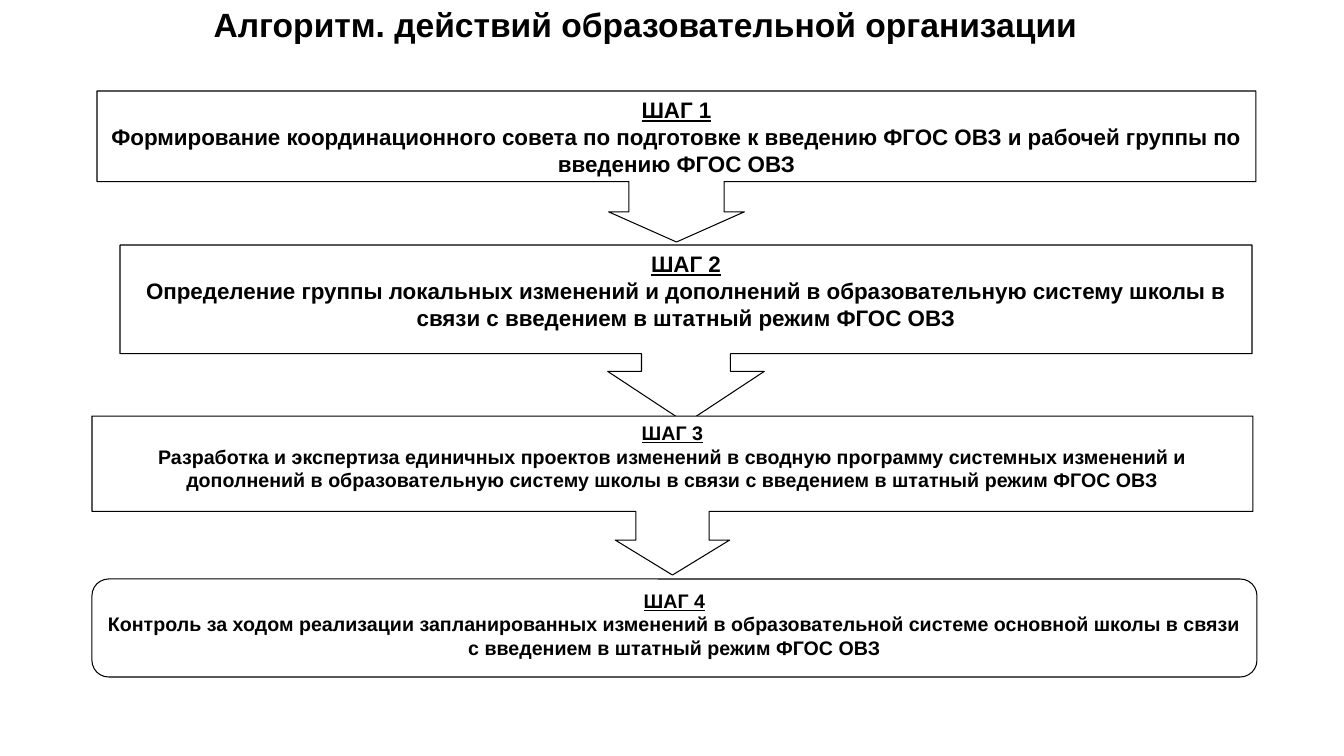
from pptx import Presentation
from pptx.dml.color import RGBColor
from pptx.enum.shapes import MSO_SHAPE
from pptx.enum.text import MSO_ANCHOR, PP_ALIGN
from pptx.util import Emu, Pt

BLACK = RGBColor(0x00, 0x00, 0x00)
WHITE = RGBColor(0xFF, 0xFF, 0xFF)
FONT = "Arial"
EMU_PER_PX = 914400 / 100.8

TITLE = "Алгоритм. действий образовательной организации"
CALLOUT = MSO_SHAPE.DOWN_ARROW_CALLOUT
ROUNDED = MSO_SHAPE.ROUNDED_RECTANGLE

STEPS = [
    (CALLOUT, (97, 91, 1159, 151), (0.63, 0.45, 0.2, 0.6), 16,
     "Формирование координационного совета по подготовке к введению ФГОС ОВЗ "
     "и рабочей группы по введению ФГОС ОВЗ"),
    (CALLOUT, (120, 245, 1132, 178), (0.5, 0.44, 0.29, 0.61), 16,
     "Определение группы локальных изменений и дополнений в образовательную "
     "систему школы в связи с введением в штатный режим ФГОС ОВЗ"),
    (CALLOUT, (92, 416, 1161, 159), (0.46, 0.36, 0.22, 0.6), 14,
     "Разработка и экспертиза единичных проектов изменений в сводную программу "
     "системных изменений и дополнений в образовательную систему школы в связи "
     "с введением в штатный режим ФГОС ОВЗ"),
    (ROUNDED, (92, 579, 1165, 98), (0.17,), 14,
     "Контроль за ходом реализации запланированных изменений в образовательной "
     "системе основной школы в связи с введением в штатный режим ФГОС ОВЗ"),
]


def px(length):
    """Turn a length in px into EMU."""
    return Emu(round(length * EMU_PER_PX))


def add_span(para, text, size, underline=False):
    """Add one bold run to a centred paragraph."""
    para.alignment = PP_ALIGN.CENTER
    span = para.add_run()
    span.text = text
    span.font.name = FONT
    span.font.size = Pt(size)
    span.font.bold = True
    span.font.underline = underline
    span.font.color.rgb = BLACK


def add_title(page):
    """Place the heading at the top of the page."""
    box = page.shapes.add_textbox(*map(px, (17, -4, 1257, 92)))
    frame = box.text_frame
    frame.word_wrap = True
    frame.vertical_anchor = MSO_ANCHOR.TOP
    frame.margin_top = px(8)
    add_span(frame.paragraphs[0], TITLE, 24)


def add_step(page, number, kind, bounds, adjustments, size, text):
    """Draw one outlined step with its underlined number and description."""
    box = page.shapes.add_shape(kind, *map(px, bounds))
    for index, value in enumerate(adjustments):
        box.adjustments[index] = value
    box.shadow.inherit = False
    box.fill.solid()
    box.fill.fore_color.rgb = WHITE
    box.line.color.rgb = BLACK
    box.line.width = Pt(0.75)
    frame = box.text_frame
    frame.word_wrap = True
    frame.vertical_anchor = MSO_ANCHOR.TOP
    add_span(frame.paragraphs[0], f"ШАГ {number}", size, underline=True)
    add_span(frame.add_paragraph(), text, size)


def main():
    """Build the slide and save it."""
    deck = Presentation()
    deck.slide_width = px(1344)
    deck.slide_height = px(756)
    page = deck.slides.add_slide(deck.slide_layouts[6])
    add_title(page)
    for number, step in enumerate(STEPS, start=1):
        add_step(page, number, *step)
    deck.save("out.pptx")


if __name__ == "__main__":
    main()
